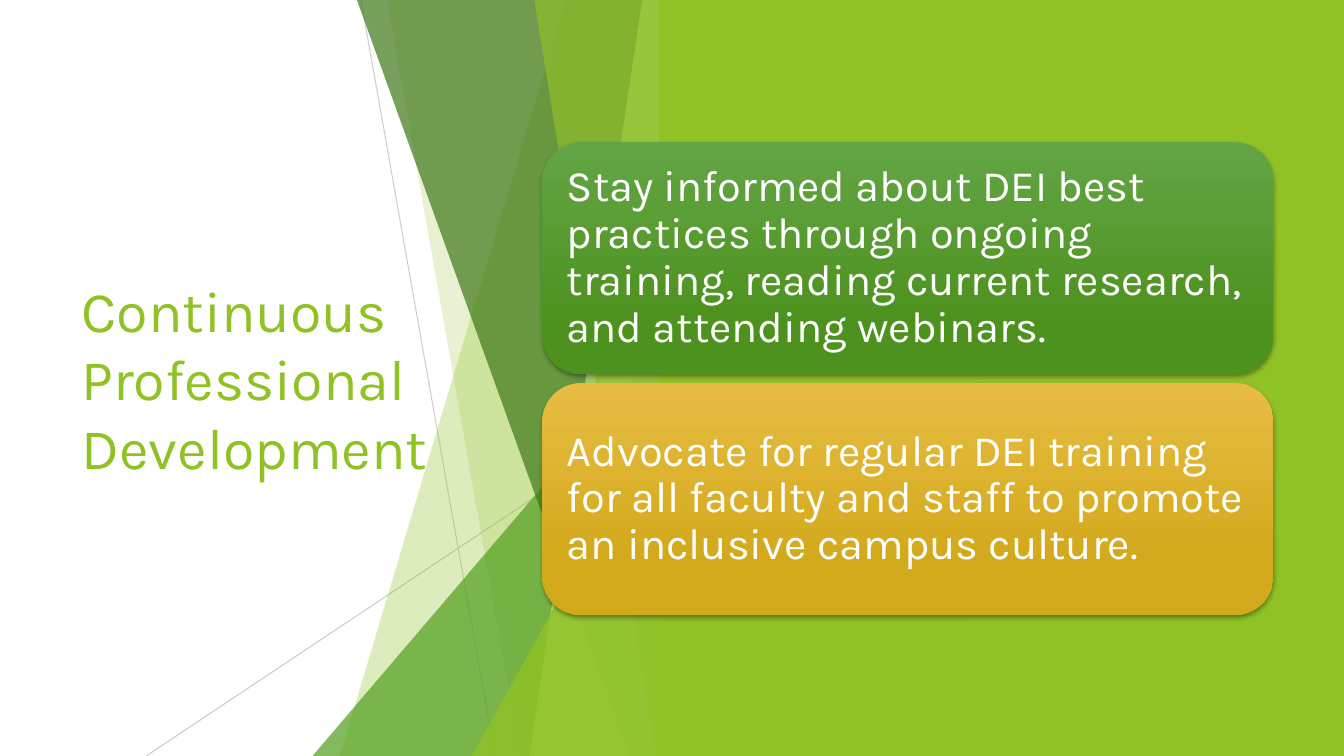
from lxml import etree
from pptx import Presentation
from pptx.dml.color import RGBColor
from pptx.enum.shapes import MSO_CONNECTOR, MSO_SHAPE
from pptx.enum.text import MSO_ANCHOR, PP_ALIGN
from pptx.oxml.ns import qn
from pptx.util import Inches, Pt

STRAIGHT = MSO_CONNECTOR.STRAIGHT
TRIANGLE = MSO_SHAPE.ISOSCELES_TRIANGLE
RECTANGLE = MSO_SHAPE.RECTANGLE
ROUNDED = MSO_SHAPE.ROUNDED_RECTANGLE
MIDDLE = MSO_ANCHOR.MIDDLE
LEFT = PP_ALIGN.LEFT

COLORS = {
    "lime": "90C226",
    "green": "54A021",
    "forest": "3F7819",
    "pale": "C0E474",
    "grey": "BFBFBF",
    "white": "FFFFFF",
    "black": "000000",
    "green_top": "63A545",
    "green_bottom": "4D921E",
    "gold_top": "E7BC43",
    "gold_bottom": "D2A91B",
}
FONT = "Karla"
FACET_RIGHT = 6.66
SLIDE_HEIGHT = 7.5


def set_color(fill, name, opacity=100):
    fill.solid()
    fill.fore_color.rgb = RGBColor.from_string(COLORS[name])
    if opacity < 100:
        color = fill._xPr.find(qn("a:solidFill"))[0]
        etree.SubElement(color, qn("a:alpha"), val=str(opacity * 1000))


def write_text(shape, text, size, color, inset, line_spacing):
    frame = shape.text_frame
    frame.word_wrap = True
    frame.vertical_anchor = MIDDLE
    frame.margin_left = frame.margin_right = Inches(inset)
    paragraph = frame.paragraphs[0]
    paragraph.alignment = LEFT
    paragraph.line_spacing = line_spacing
    run = paragraph.add_run()
    run.text = text
    run.font.name = FONT
    run.font.size = Pt(size)
    run.font.color.rgb = RGBColor.from_string(COLORS[color])


presentation = Presentation()
presentation.slide_width = Inches(13.33)
presentation.slide_height = Inches(SLIDE_HEIGHT)
slide = presentation.slides.add_slide(presentation.slide_layouts[6])
shapes = slide.shapes

# Title
title = shapes.add_textbox(Inches(0.71), Inches(1.51), Inches(3.88), Inches(4.48))
write_text(title, "Continuous Professional Development", 41, "lime", 0.1, 1.0)

# Thin lines behind the facets
for x1, y1, x2, y2, opacity in [
    (3.58, 0, 4.91, SLIDE_HEIGHT, 75),
    (FACET_RIGHT, 4.03, 1.45, SLIDE_HEIGHT, 80),
]:
    line = shapes.add_connector(STRAIGHT, Inches(x1), Inches(y1), Inches(x2), Inches(y2))
    line.line.width = Pt(0.75)
    set_color(line.line.fill, "grey", opacity)
    etree.SubElement(line._element.spPr, qn("a:effectLst"))

# Facets: a band has its top and bottom x, a triangle its left and top
for kind, first, second, color, opacity in [
    ("band", 5.61, 3.37, "lime", 30),
    ("band", 3.84, 5.16, "lime", 20),
    ("triangle", 3.1, 3.33, "green", 72),
    ("band", 3.54, 6.24, "forest", 70),
    ("band", 6.37, 5.25, "pale", 70),
    ("band", 5.3, 6.51, "lime", 65),
    ("triangle", 4.68, 3.93, "lime", 80),
]:
    if kind == "band":
        builder = shapes.build_freeform(Inches(first), 0)
        corners = [(FACET_RIGHT, 0), (FACET_RIGHT, SLIDE_HEIGHT), (second, SLIDE_HEIGHT)]
        builder.add_line_segments([(Inches(x), Inches(y)) for x, y in corners])
        facet = builder.convert_to_shape()
    else:
        facet = shapes.add_shape(TRIANGLE, Inches(first), Inches(second),
                                 Inches(FACET_RIGHT - first), Inches(SLIDE_HEIGHT - second))
        facet.adjustments[0] = 1
    facet.shadow.inherit = False
    set_color(facet.fill, color, opacity)
    facet.line.fill.background()

# Right panel
panel = shapes.add_shape(RECTANGLE, Inches(6.54), 0, Inches(6.8), Inches(SLIDE_HEIGHT))
panel.shadow.inherit = False
set_color(panel.fill, "lime")
panel.line.fill.background()

# Cards with a gradient and a soft shadow
cards = [
    ("green", "Stay informed about DEI best practices through ongoing training, "
              "reading current research, and attending webinars."),
    ("gold", "Advocate for regular DEI training for all faculty and staff "
             "to promote an inclusive campus culture."),
]
for index, (color, text) in enumerate(cards):
    card = shapes.add_shape(ROUNDED, Inches(5.38), Inches(1.41 + 2.39 * index),
                            Inches(7.25), Inches(2.3))
    card.line.fill.background()
    card.fill.gradient()
    card.fill.gradient_angle = 270
    for stop, end, position in zip(card.fill.gradient_stops, ("top", "bottom"), (0, 0.78)):
        stop.color.rgb = RGBColor.from_string(COLORS[f"{color}_{end}"])
        stop.position = position
    card.shadow.inherit = False
    effects = card._element.spPr.find(qn("a:effectLst"))
    shadow = etree.SubElement(effects, qn("a:outerShdw"), blurRad=str(Pt(3)),
                              dist=str(Pt(2)), dir="5400000", rotWithShape="0")
    shadow_color = etree.SubElement(shadow, qn("a:srgbClr"), val=COLORS["black"])
    etree.SubElement(shadow_color, qn("a:alpha"), val="35000")
    # The rounded corners add their own inset to this one
    write_text(card, text, 31, "white", 0.13, 0.9)

presentation.save("out.pptx")
